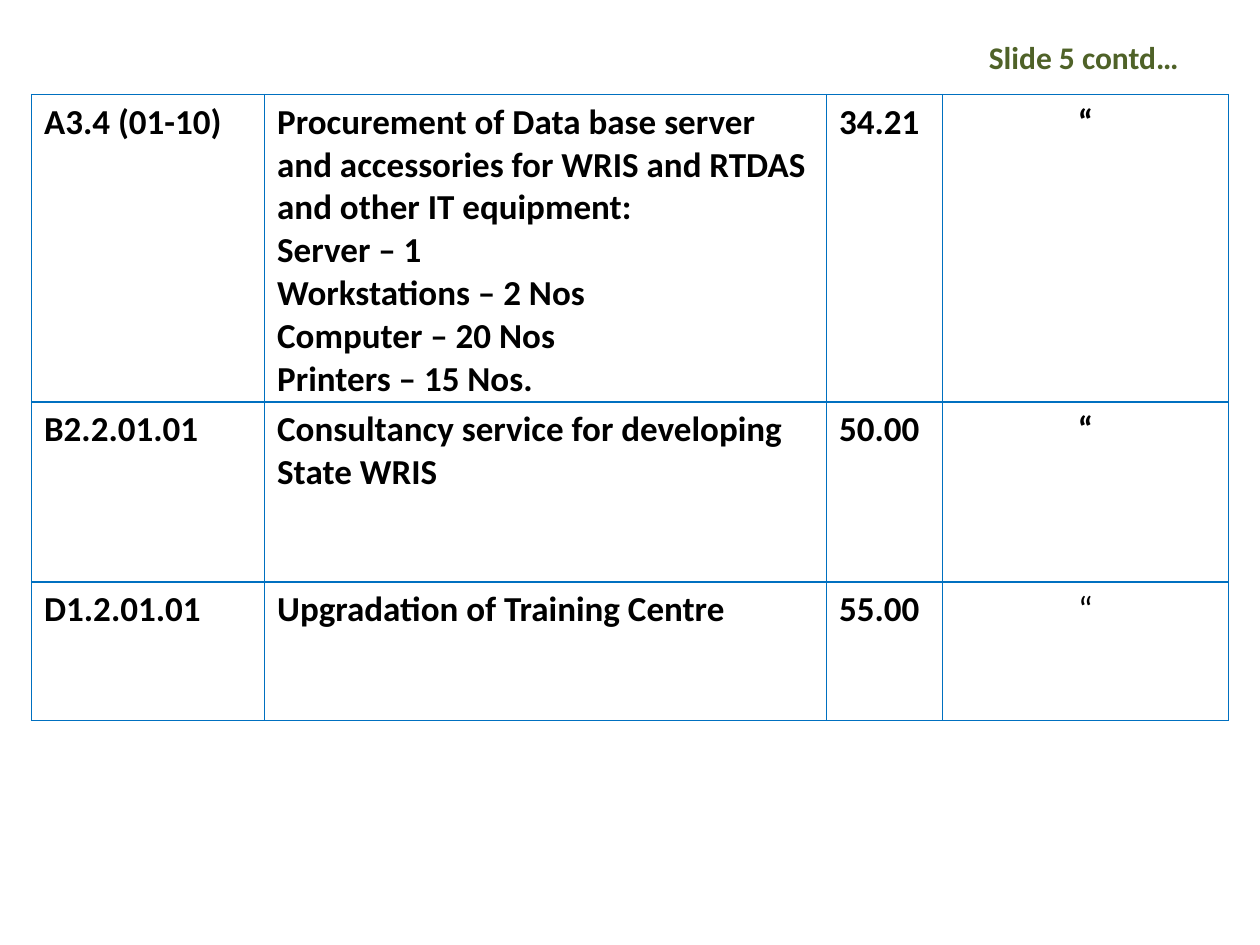
from lxml import etree
from pptx import Presentation
from pptx.dml.color import RGBColor
from pptx.enum.text import MSO_AUTO_SIZE, PP_ALIGN
from pptx.oxml.ns import qn
from pptx.util import Inches, Pt

CENTER = PP_ALIGN.CENTER
GROW = MSO_AUTO_SIZE.SHAPE_TO_FIT_TEXT


def write(par, text, size, color, bold=True):
    run = par.add_run()
    run.text = text
    run.font.name = "Calibri"
    run.font.size = Pt(size)
    run.font.bold = bold
    run.font.color.rgb = RGBColor.from_string(color)


def border(cell, color, width):
    props = cell._tc.get_or_add_tcPr()
    for pos, side in enumerate(("a:lnL", "a:lnR", "a:lnT", "a:lnB")):
        line = etree.Element(qn(side), w=str(Pt(width)))
        fill = etree.SubElement(line, qn("a:solidFill"))
        etree.SubElement(fill, qn("a:srgbClr"), val=color)
        props.insert(pos, line)


deck = Presentation()
deck.slide_width = Inches(10)
deck.slide_height = Inches(7.5)
slide = deck.slides.add_slide(deck.slide_layouts[6])

widths = [1.85, 4.46, 0.92, 2.27]
heights = [2.44, 1.43, 1.1]
rows = [
    (["A3.4 (01-10)"],
     ["Procurement of Data base server and accessories for WRIS and RTDAS and other IT equipment:",
      "Server – 1", "Workstations – 2 Nos", "Computer – 20 Nos", "Printers – 15 Nos."],
     ["34.21"], ["“"]),
    (["B2.2.01.01"], ["Consultancy service for developing State WRIS"], ["50.00"], ["“"]),
    (["D1.2.01.01"], ["Upgradation of Training Centre"], ["55.00"], ["“"]),
]

frame = slide.shapes.add_table(len(rows), len(widths), Inches(0.25), Inches(0.75),
                               Inches(sum(widths)), Inches(sum(heights)))
table = frame.table
table.first_row = False
table.horz_banding = False
for col, width in zip(table.columns, widths):
    col.width = Inches(width)
for row, height in zip(table.rows, heights):
    row.height = Inches(height)

last = (len(rows) - 1, len(widths) - 1)
for r, row in enumerate(rows):
    for c, lines in enumerate(row):
        cell = table.cell(r, c)
        cell.fill.background()
        cell.margin_bottom = Inches(0)
        border(cell, "0070C0", 1)
        body = cell.text_frame
        for i, line in enumerate(lines):
            par = body.add_paragraph() if i else body.paragraphs[0]
            if c == last[1]:
                par.alignment = CENTER
            write(par, line, 20, "000000", (r, c) != last)

label = slide.shapes.add_textbox(Inches(7.75), Inches(0.25), Inches(2), Inches(0.4))
label.text_frame.word_wrap = True
label.text_frame.auto_size = GROW
write(label.text_frame.paragraphs[0], "Slide 5 contd…", 18, "4F6228")

deck.save("out.pptx")
